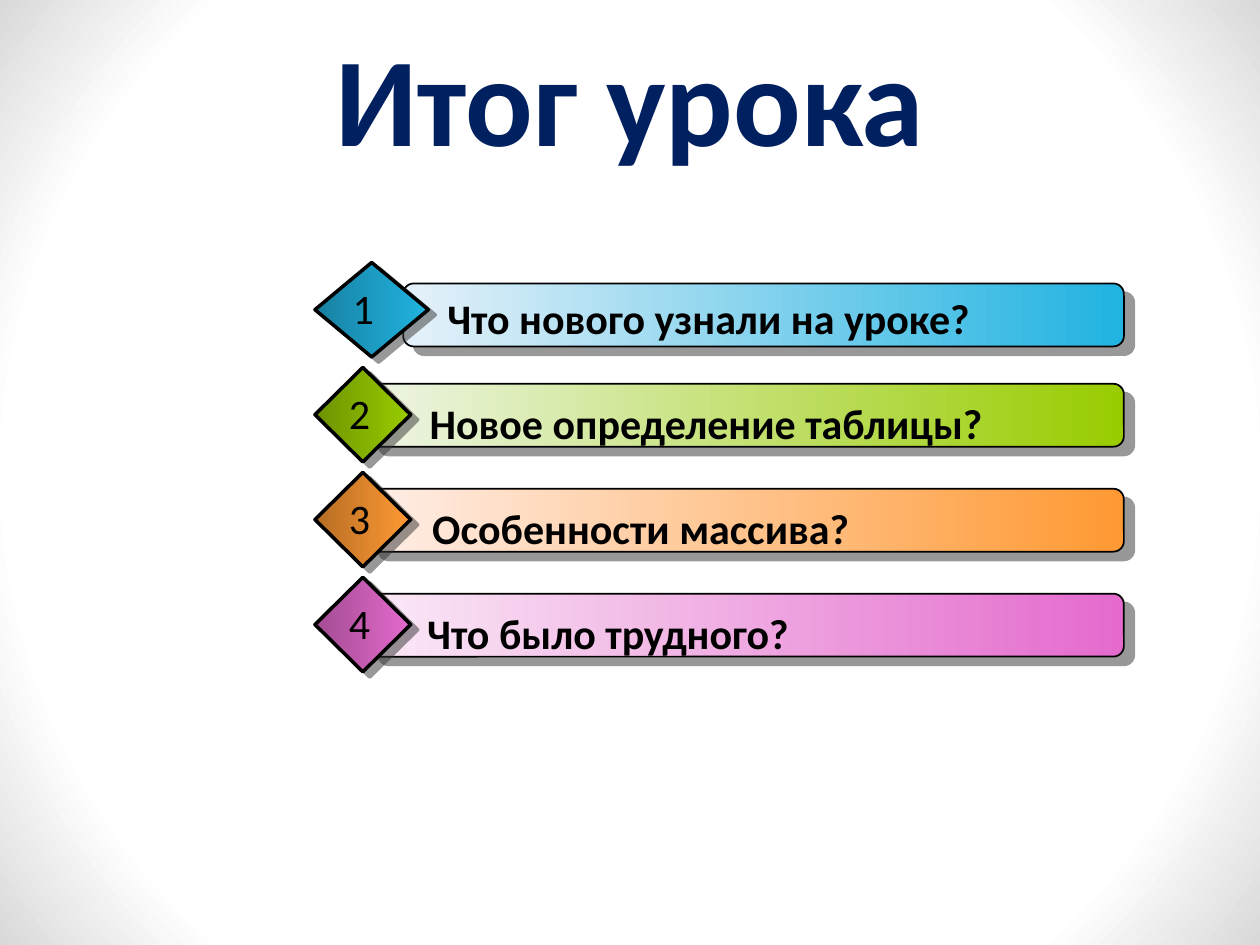
from lxml import etree
from pptx import Presentation
from pptx.dml.color import RGBColor
from pptx.enum.shapes import MSO_SHAPE
from pptx.enum.text import MSO_ANCHOR, MSO_AUTO_SIZE, PP_ALIGN
from pptx.oxml.ns import qn
from pptx.util import Inches, Pt

RECT, BAR, GEM = MSO_SHAPE.RECTANGLE, MSO_SHAPE.ROUNDED_RECTANGLE, MSO_SHAPE.DIAMOND
MIDDLE, CENTER = MSO_ANCHOR.MIDDLE, PP_ALIGN.CENTER
GROW = MSO_AUTO_SIZE.SHAPE_TO_FIT_TEXT

WHITE = RGBColor(0xFF, 0xFF, 0xFF)
GRAY = RGBColor(0xD9, 0xD9, 0xD9)
BLACK = RGBColor(0, 0, 0)
NAVY = RGBColor(0x00, 0x20, 0x60)
SHADE = RGBColor(0x33, 0x33, 0x33)
SKY, BLUE, TEAL = RGBColor(0xE6, 0xF1, 0xF9), RGBColor(0x21, 0xB3, 0xE1), RGBColor(0x18, 0x80, 0xA1)
MINT, LIME, MOSS = RGBColor(0xEE, 0xF5, 0xE6), RGBColor(0x99, 0xCC, 0x00), RGBColor(0x6D, 0x92, 0x00)
CREAM, ORANGE, BROWN = RGBColor(0xFF, 0xEE, 0xE7), RGBColor(0xFF, 0x99, 0x33), RGBColor(0xB6, 0x6D, 0x24)
BLUSH, PINK, PLUM = RGBColor(0xFA, 0xE9, 0xF6), RGBColor(0xE4, 0x6A, 0xCD), RGBColor(0xA3, 0x4C, 0x93)


class Deck:
    font = "Calibri"

    def __init__(self):
        self.prs = Presentation()
        self.prs.slide_width, self.prs.slide_height = Inches(10), Inches(7.5)
        self.slide = self.prs.slides.add_slide(self.prs.slide_layouts[6])
        self.home = self.slide.shapes

    def group(self):
        """Send the next elements into a new group."""
        self.home = self.slide.shapes.add_group_shape().shapes

    def shape(self, kind, box, first, last):
        item = self.home.add_shape(kind, *map(Inches, box))
        item.shadow.inherit = False
        item.line.fill.background()
        item.fill.gradient()
        item.fill.gradient_angle = 0
        for stop, color, place in zip(item.fill.gradient_stops, (first, last), (0, 1)):
            stop.color.rgb, stop.position = color, place
        return item

    def backdrop(self):
        item = self.shape(RECT, (0, 0, 10, 7.5), WHITE, GRAY)
        item.fill.gradient_stops[0].position = 0.79
        line = item.element.spPr.find(".//" + qn("a:lin"))
        path = etree.Element(qn("a:path"), path="circle")
        etree.SubElement(path, qn("a:fillToRect"), l="50000", t="50000", r="50000", b="50000")
        line.getparent().replace(line, path)

    def raised(self, kind, box, first, last, width, depth, angle):
        """Outlined shape with a hard offset shadow."""
        item = self.shape(kind, box, first, last)
        item.line.color.rgb, item.line.width = BLACK, Pt(width)
        cast = etree.SubElement(
            item.element.spPr.find(qn("a:effectLst")), qn("a:outerShdw"), blurRad="0",
            dist=str(Pt(depth)), dir=str(angle * 60000), algn="ctr", rotWithShape="0")
        color = etree.SubElement(cast, qn("a:srgbClr"), val=str(SHADE))
        etree.SubElement(color, qn("a:alpha"), val="50000")
        return item

    def bar(self, box, light, color):
        item = self.raised(BAR, box, light, color, 1, 7.8, 40)
        item.adjustments[0] = 0.167

    def gem(self, box, dark, color):
        self.raised(GEM, box, dark, color, 2, 5, 37)

    def text(self, box, words, size=24, color=BLACK, bold=False, wrap=True, inset=0.1):
        frame = self.home.add_textbox(*map(Inches, box)).text_frame
        frame.word_wrap, frame.auto_size = wrap, GROW
        frame.margin_left = Inches(inset)
        run = frame.paragraphs[0].add_run()
        run.text = words
        run.font.name, run.font.size = self.font, Pt(size)
        run.font.bold, run.font.color.rgb = bold, color
        return frame

    def title(self, words):
        frame = self.text((0, 0.2, 10, 1.13), words, 72, NAVY, True)
        frame.auto_size = MSO_AUTO_SIZE.NONE
        frame.vertical_anchor = MIDDLE
        frame.paragraphs[0].alignment = CENTER


def main():
    deck = Deck()
    deck.backdrop()
    deck.title("Итог урока")

    # Questions: words, text inset, text width, light, main and dark colours
    rows = [
        ("Что нового узнали на уроке?", 0.25, 5.53, SKY, BLUE, TEAL),
        ("Новое определение таблицы?", 0.23, 5.74, MINT, LIME, MOSS),
        ("Особенности массива?", 0.25, 4.64, CREAM, ORANGE, BROWN),
        ("Что было трудного?", 0.21, 5.58, BLUSH, PINK, PLUM),
    ]
    left, right, pitch = 2.5, 8.92, 0.833
    for i, (words, inset, width, light, color, dark) in enumerate(rows):
        top = 2.083 + i * pitch
        # The first row has a wider diamond and a shorter bar
        wide = i == 0
        start = 3.2 if wide else 2.92
        deck.group()
        deck.bar((start, top + (0.167 if wide else 0.13), right - start, 0.5), light, color)
        deck.gem((left, top, 0.9 if wide else 0.76, 0.75), dark, color)
        deck.text((3.3 if wide else 3.18, top + 0.19, width, 0.51), words, bold=True, inset=inset)
        deck.text((2.7 if wide else 2.67, top + 0.11, 0.47 if wide else 0.39, 0.5),
                  str(i + 1), wrap=False)

    deck.prs.save("out.pptx")


if __name__ == "__main__":
    main()
